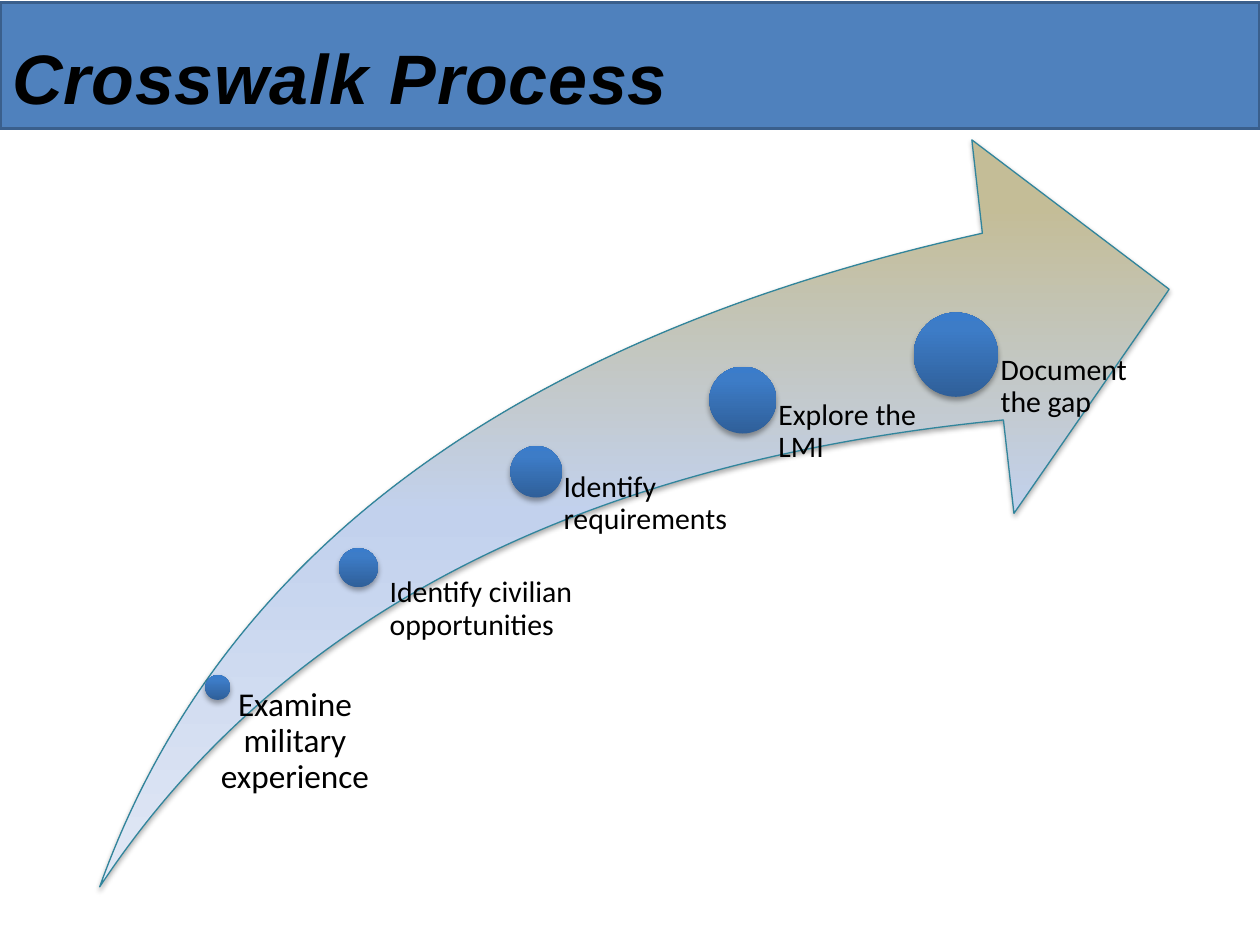
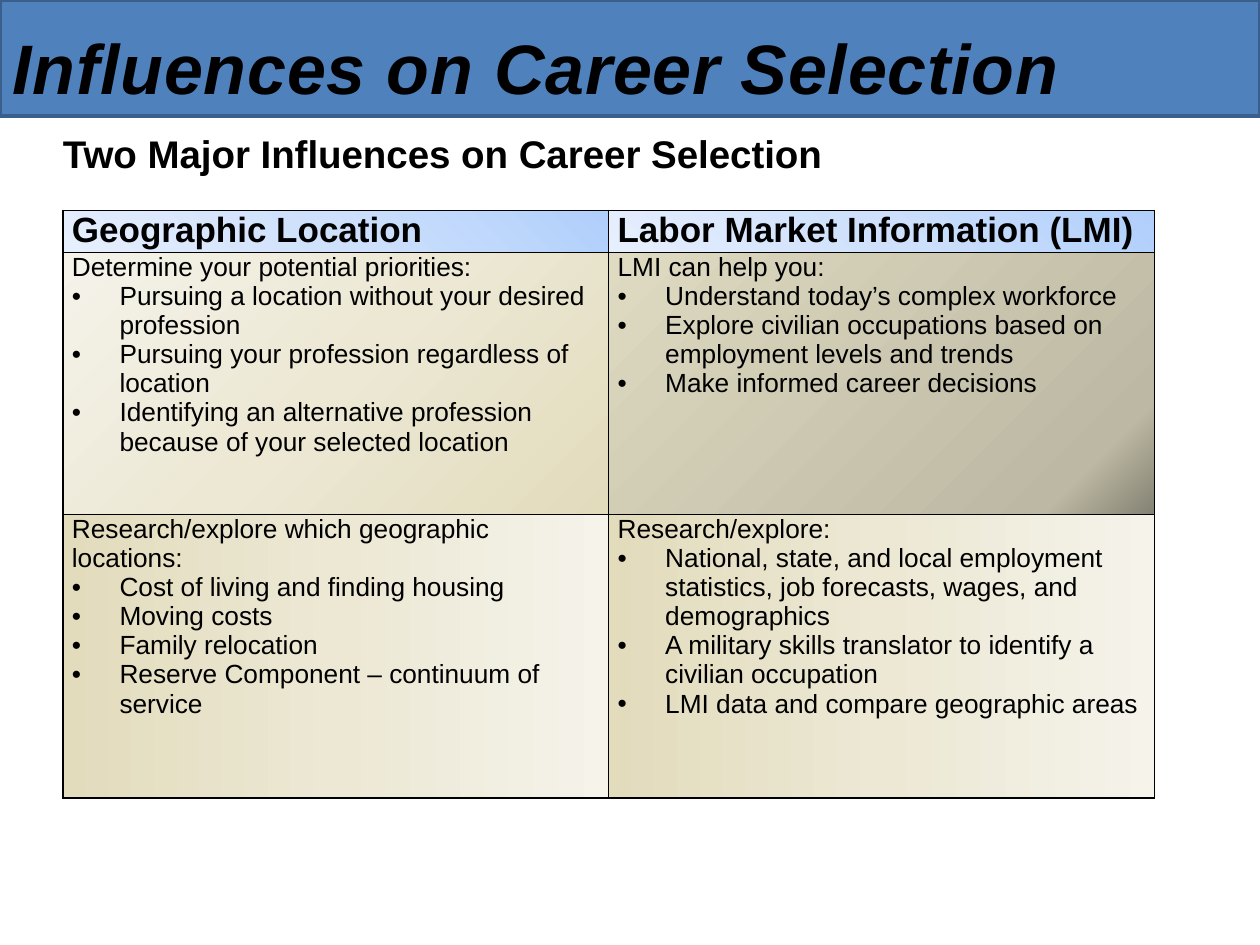
from dataclasses import dataclass

from lxml import etree
from pptx import Presentation
from pptx.dml.color import RGBColor as RGB
from pptx.enum.shapes import MSO_SHAPE as Shape
from pptx.enum.text import MSO_ANCHOR as Anchor, MSO_AUTO_SIZE as AutoSize, PP_ALIGN as Align
from pptx.oxml import parse_xml
from pptx.oxml.ns import nsdecls, qn
from pptx.util import Cm, Pt


@dataclass(frozen=True)
class Gradient:
    stops: tuple  # (percent, colour) pairs
    angle: int = 0  # degrees clockwise
    focus: str = ""  # corner a radial gradient starts from


@dataclass(frozen=True)
class Theme:
    heading_font: str = "Arial"
    label_font: str = "Calibri"
    text: str = "000000"
    band: str = "4F81BD"
    band_line: str = "3A5F8C"
    arrow_line: str = "31859C"
    title_size: int = 40
    subtitle_size: int = 22
    header_size: int = 20
    cell_size: int = 15
    first_label_size: int = 19
    label_size: int = 17
    arrow: Gradient = Gradient(((9, "C4BD97"), (50, "C2D1ED"), (100, "E1E8F5")), 90)
    dot: Gradient = Gradient(((0, "2F5F99"), (80, "3D7CC7"), (100, "3A7CCB")), 270)
    header: Gradient = Gradient(
        ((0, "B0CFFB"), (50, "CEE0FC"), (100, "E6EFFD")), focus="top right")
    sand: tuple = ((0, "E2DBBC"), (50, "ECE8D4"), (100, "F5F3EA"))
    stone: tuple = ((0, "848273"), (14, "BCB8A3"), (100, "DFDBC2"))


THEME = Theme()
FOCUS_RECTS = {
    "top right": 'l="100000" b="100000"',
    "bottom right": 'l="100000" t="100000"',
}


@dataclass(frozen=True)
class Step:
    """A dot on the arrow; its label starts at the dot's centre plus the nudge (cm)."""
    text: str
    left: float
    top: float
    diameter: float
    label_width: float
    nudge: tuple = (0, 0)
    label_bottom: float = 17.07
    size: int = THEME.label_size
    align: Align = Align.LEFT


STEPS = (
    Step("Examine military experience", 4.14, 13.61, 0.5, 3.35, nudge=(-0.25, 0),
         size=THEME.first_label_size, align=Align.CENTER),
    Step("Identify civilian opportunities", 6.83, 11.05, 0.79, 4.42,
         nudge=(0.21, 0.19), label_bottom=16.43),
    Step("Identify requirements", 10.29, 8.99, 1.04, 4.17),
    Step("Explore the LMI", 14.3, 7.39, 1.35, 4.32),
    Step("Document the gap", 18.42, 6.3, 1.7, 4.32),
)

HEADERS = ("Geographic Location", "Labor Market Information (LMI)")
INFLUENCES = (
    (
        ("Determine your potential priorities:",
         "Pursuing a location without your desired profession",
         "Pursuing your profession regardless of location",
         "Identifying an alternative profession because of your selected location"),
        ("LMI can help you:",
         "Understand today’s complex workforce",
         "Explore civilian occupations based on employment levels and trends",
         "Make informed career decisions"),
    ),
    (
        ("Research/explore which geographic locations:",
         "Cost of living and finding housing",
         "Moving costs",
         "Family relocation",
         "Reserve Component – continuum of service"),
        ("Research/explore:",
         "National, state, and local employment statistics, job forecasts, wages, "
         "and demographics",
         "A military skills translator to identify a civilian occupation",
         "LMI data and compare geographic areas"),
    ),
)
INFLUENCE_FILLS = (
    (Gradient(THEME.sand, focus="bottom right"), Gradient(THEME.stone, focus="bottom right")),
    (Gradient(THEME.sand), Gradient(THEME.sand)),
)


def fill_gradient(fill, properties, gradient):
    """Give the owner of fill, whose XML properties are passed, a multi-stop gradient."""
    stops = "".join(
        f'<a:gs pos="{percent * 1000}"><a:srgbClr val="{colour}"/></a:gs>'
        for percent, colour in gradient.stops)
    if gradient.focus:
        direction = (f'<a:path path="circle"><a:fillToRect {FOCUS_RECTS[gradient.focus]}/>'
                     '</a:path>')
    else:
        direction = f'<a:lin ang="{gradient.angle * 60000}" scaled="0"/>'
    fill.solid()
    properties.replace(properties.find(qn("a:solidFill")), parse_xml(
        f'<a:gradFill {nsdecls("a")} rotWithShape="1"><a:gsLst>{stops}</a:gsLst>'
        f'{direction}</a:gradFill>'))


def add_soft_shadow(shape):
    shape.shadow.inherit = False
    effects = shape._element.spPr.find(qn("a:effectLst"))
    effects.append(parse_xml(
        f'<a:outerShdw {nsdecls("a")} blurRad="{Pt(3.1)}" dist="{Pt(1.8)}" dir="5400000" '
        'rotWithShape="0"><a:srgbClr val="000000"><a:alpha val="35000"/></a:srgbClr>'
        '</a:outerShdw>'))


def add_shaded_shape(slide, kind, box, gradient):
    shape = slide.shapes.add_shape(kind, *map(Cm, box))
    fill_gradient(shape.fill, shape._element.spPr, gradient)
    shape.line.fill.background()
    add_soft_shadow(shape)
    return shape


def format_text(frame, font, size, bold=False, italic=False):
    for paragraph in frame.paragraphs:
        for run in paragraph.runs:
            run.font.name = font
            run.font.size = Pt(size)
            run.font.bold = bold
            run.font.italic = italic
            run.font.color.rgb = RGB.from_string(THEME.text)


def set_insets(owner, left=0, top=0, right=0, bottom=0):
    owner.margin_left, owner.margin_top = Cm(left), Cm(top)
    owner.margin_right, owner.margin_bottom = Cm(right), Cm(bottom)


def add_text(slide, text, box, font, size, bold=False, **insets):
    frame = slide.shapes.add_textbox(*map(Cm, box)).text_frame
    frame.word_wrap = True
    set_insets(frame, **insets)
    frame.text = text
    format_text(frame, font, size, bold)
    return frame


def add_titled_slide(deck, text, band_top, band_height, title_box):
    """Add a slide whose title lies on a full-width band."""
    slide = deck.slides.add_slide(deck.slide_layouts[5])
    title = slide.shapes.title
    title.left, title.top, title.width, title.height = map(Cm, title_box)
    frame = title.text_frame
    frame.text = text
    frame.word_wrap = True
    frame.auto_size = AutoSize.NONE
    frame.vertical_anchor = Anchor.TOP
    set_insets(frame, 0.25, 0.13, 0.25, 0.13)
    frame.paragraphs[0].alignment = Align.LEFT
    format_text(frame, THEME.heading_font, THEME.title_size, bold=True, italic=True)
    frame.paragraphs[0].runs[0].font._element.set("spc", "50")

    band = slide.shapes.add_shape(
        Shape.RECTANGLE, 0, Cm(band_top), deck.slide_width, Cm(band_height))
    band.fill.solid()
    band.fill.fore_color.rgb = RGB.from_string(THEME.band)
    band.line.color.rgb = RGB.from_string(THEME.band_line)
    band.line.width = Pt(2)
    band.shadow.inherit = False
    title._element.addprevious(band._element)
    return slide


def add_step(slide, step):
    add_shaded_shape(slide, Shape.OVAL,
                     (step.left, step.top, step.diameter, step.diameter), THEME.dot)
    left = step.left + step.diameter / 2 + step.nudge[0]
    top = step.top + step.diameter / 2 + step.nudge[1]
    label = add_text(slide, step.text, (left, top, step.label_width, step.label_bottom - top),
                     THEME.label_font, step.size, left=step.diameter * 0.53)
    label.paragraphs[0].alignment = step.align
    label.paragraphs[0].line_spacing = 0.9


def add_bullet(paragraph):
    properties = paragraph._p.get_or_add_pPr()
    properties.set("marL", str(Cm(0.96)))
    properties.set("indent", str(-Cm(0.96)))
    etree.SubElement(properties, qn("a:buFont"), typeface=THEME.heading_font)
    etree.SubElement(properties, qn("a:buChar"), char="•")


def fill_cell(cell, lines, gradient, size, bold=False):
    """Write a lead line followed by bullets, on a gradient with thin borders."""
    set_insets(cell, left=0.18, right=0.18)
    frame = cell.text_frame
    frame.text = "\n".join(lines)
    format_text(frame, THEME.heading_font, size, bold)
    for paragraph in frame.paragraphs[1:]:
        add_bullet(paragraph)
    properties = cell._tc.get_or_add_tcPr()
    for side in ("lnL", "lnR", "lnT", "lnB"):
        properties.append(parse_xml(
            f'<a:{side} {nsdecls("a")} w="{Pt(1)}"><a:solidFill>'
            f'<a:srgbClr val="{THEME.text}"/></a:solidFill></a:{side}>'))
    fill_gradient(cell.fill, properties, gradient)


def add_influence_table(slide):
    row_heights = (0.71, 5.28, 5.72)
    table = slide.shapes.add_table(
        len(row_heights), len(HEADERS), Cm(1.27), Cm(4.24), Cm(22), Cm(sum(row_heights))).table
    table.horz_banding = False
    for row, height in zip(table.rows, row_heights):
        row.height = Cm(height)
    for column, header in enumerate(HEADERS):
        table.columns[column].width = Cm(11)
        fill_cell(table.cell(0, column), [header], THEME.header, THEME.header_size, bold=True)
        for row, (topics, fills) in enumerate(zip(INFLUENCES, INFLUENCE_FILLS), start=1):
            fill_cell(table.cell(row, column), topics[column], fills[column], THEME.cell_size)


def build_crosswalk(deck):
    slide = add_titled_slide(deck, "Crosswalk Process", 0.05, 2.54, (0, 0.56, 14.94, 1.96))
    arrow = add_shaded_shape(slide, Shape.SWOOSH_ARROW, (2.01, 2.82, 21.56, 15.06), THEME.arrow)
    arrow.adjustments[0] = arrow.adjustments[1] = 0.25
    arrow.line.color.rgb = RGB.from_string(THEME.arrow_line)
    arrow.line.width = Pt(0.75)
    for step in STEPS:
        add_step(slide, step)


def build_influences(deck):
    slide = add_titled_slide(
        deck, "Influences on Career Selection", 0, 2.34, (0, 0.36, 24.97, 3.68))
    add_text(slide, "Two Major Influences on Career Selection", (1.27, 2.21, 17.15, 2.06),
             THEME.heading_font, THEME.subtitle_size, bold=True, top=0.41)
    add_influence_table(slide)


def main():
    deck = Presentation()
    deck.slide_width, deck.slide_height = Cm(25.4), Cm(19.05)
    build_crosswalk(deck)
    build_influences(deck)
    deck.save("out.pptx")


if __name__ == "__main__":
    main()
